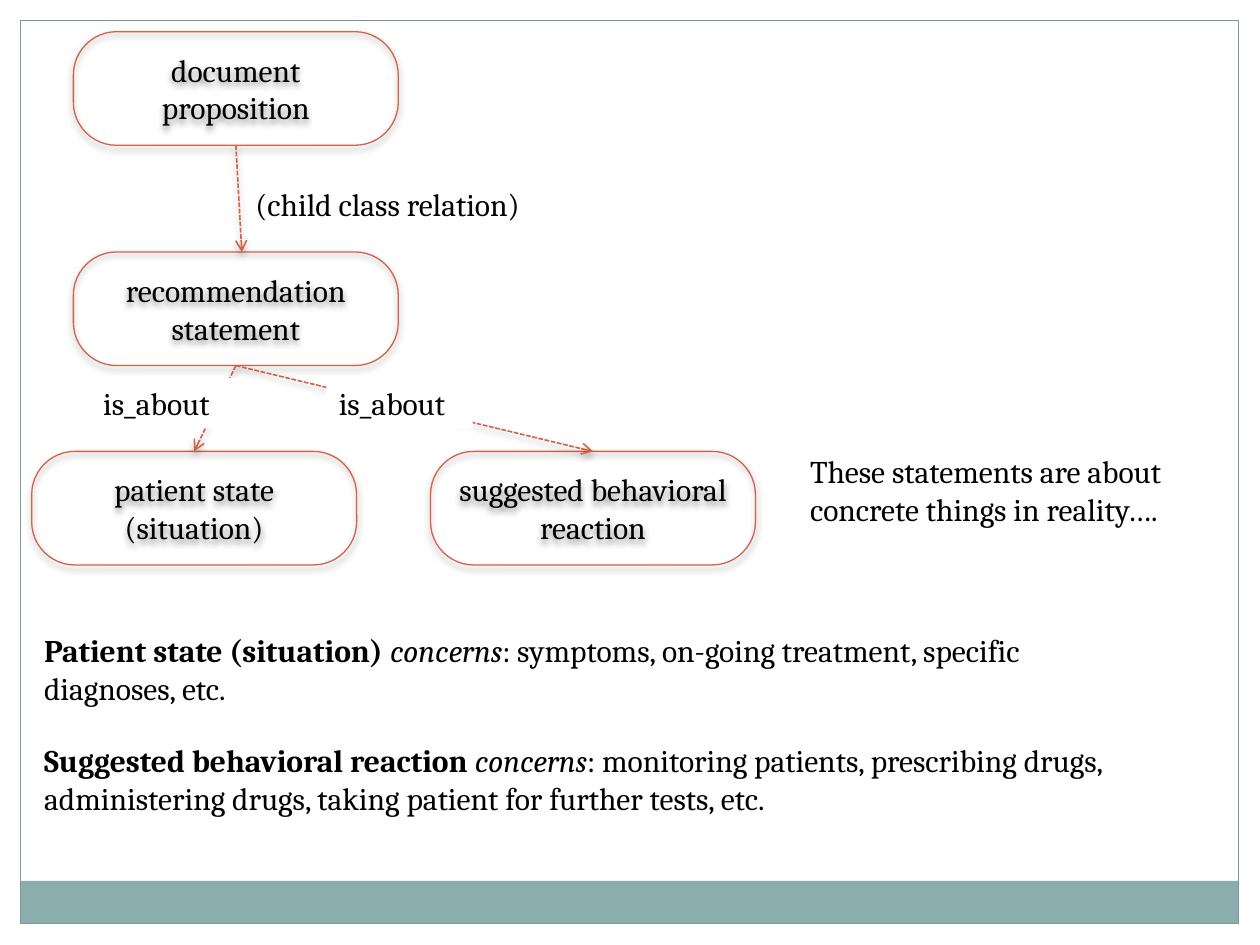
from lxml.etree import SubElement
from pptx import Presentation
from pptx.dml.color import RGBColor
from pptx.enum.dml import MSO_LINE
from pptx.enum.shapes import MSO_CONNECTOR, MSO_SHAPE
from pptx.enum.text import MSO_ANCHOR, PP_ALIGN
from pptx.oxml.ns import qn
from pptx.util import Cm, Pt

FONT = "Cambria"
TEXT, ACCENT, FRAME, BAND, WHITE = "000000", "D16349", "7C999A", "8CADAE", "FFFFFF"
NODE_WIDTH, NODE_HEIGHT = 6.55, 2.29
TOP, LEFT, BOTTOM = 0, 1, 2


def color(value):
    return RGBColor.from_string(value)


def format_span(span, bold=False, italic=False):
    span.font.name = FONT
    span.font.size = Pt(18)
    span.font.bold = bold
    span.font.italic = italic
    span.font.color.rgb = color(TEXT)


def add_shadow(shape, opacity):
    """Soft shadow straight below the shape; opacity in percent."""
    effects = SubElement(shape._element.spPr, qn("a:effectLst"))
    shadow = SubElement(effects, qn("a:outerShdw"), blurRad=str(Pt(4)),
                        dist=str(Pt(2)), dir="5400000", rotWithShape="0")
    black = SubElement(shadow, qn("a:srgbClr"), val="000000")
    SubElement(black, qn("a:alpha"), val=str(opacity * 1000))


def add_text(slide, left, top, width, height, parts, wrap=True, fill=None):
    """Text box from (text, bold, italic) parts."""
    box = slide.shapes.add_textbox(Cm(left), Cm(top), Cm(width), Cm(height))
    box.text_frame.word_wrap = wrap
    if fill:
        box.fill.solid()
        box.fill.fore_color.rgb = color(fill)
    para = box.text_frame.paragraphs[0]
    for text, bold, italic in parts:
        span = para.add_run()
        span.text = text
        format_span(span, bold, italic)


def add_node(slide, left, top, text):
    node = slide.shapes.add_shape(MSO_SHAPE.ROUNDED_RECTANGLE, Cm(left), Cm(top),
                                  Cm(NODE_WIDTH), Cm(NODE_HEIGHT))
    node.adjustments[0] = 0.38
    node.fill.background()
    node.line.color.rgb = color(ACCENT)
    node.line.width = Pt(0.75)
    add_shadow(node, 45)
    frame = node.text_frame
    frame.word_wrap = True
    frame.vertical_anchor = MSO_ANCHOR.MIDDLE
    frame.text = text
    frame.paragraphs[0].alignment = PP_ALIGN.CENTER
    format_span(frame.paragraphs[0].runs[0])
    return node


def add_arrow(slide, parent, child, shift=0):
    """Dashed arrow from parent to child; a shifted end stays unjoined."""
    arrow = slide.shapes.add_connector(
        MSO_CONNECTOR.STRAIGHT, parent.left + parent.width // 2,
        parent.top + parent.height, child.left + child.width // 2 + Cm(shift), child.top)
    arrow.begin_connect(parent, BOTTOM)
    if not shift:
        arrow.end_connect(child, TOP)
    arrow.line.color.rgb = color(ACCENT)
    arrow.line.width = Pt(0.9)
    arrow.line.dash_style = MSO_LINE.SQUARE_DOT
    SubElement(arrow.line._get_or_add_ln(), qn("a:tailEnd"), type="arrow")
    add_shadow(arrow, 35)


def draw_frame(slide, left, top, width, height):
    # Band along the bottom edge
    band_height = 0.86
    band = slide.shapes.add_shape(MSO_SHAPE.RECTANGLE, Cm(left),
                                  Cm(top + height - band_height), Cm(width), Cm(band_height))
    band.fill.solid()
    band.fill.fore_color.rgb = color(BAND)
    band.line.fill.background()
    # Outline of the page
    outline = slide.shapes.add_shape(MSO_SHAPE.RECTANGLE, Cm(left), Cm(top),
                                     Cm(width), Cm(height))
    outline.fill.background()
    outline.line.color.rgb = color(FRAME)
    outline.line.width = Pt(0.75)
    for shape in (band, outline):
        shape.shadow.inherit = False


def draw_diagram(slide, left, top):
    # Classes
    document = add_node(slide, left + 0.84, top, "document proposition")
    statement = add_node(slide, left + 0.84, top + 4.44, "recommendation statement")
    patient = add_node(slide, left, top + 8.46, "patient state (situation)")
    reaction = add_node(slide, left + 8.04, top + 8.46, "suggested behavioral reaction")
    # Relations
    add_arrow(slide, document, statement, shift=0.12)
    add_arrow(slide, statement, patient)
    add_arrow(slide, statement, reaction)
    # Relation labels
    add_text(slide, left + 4.26, top + 2.97, 6.17, 1.02,
             [("(child class relation)", False, False)], wrap=False)
    for offset in (1.19, 5.94):
        add_text(slide, left + offset, top + 6.98, 2.95, 1.02,
                 [("is_about", False, False)], wrap=False, fill=WHITE)
    # Side remark
    add_text(slide, left + 15.44, top + 8.35, 8.89, 1.8,
             [("These statements are about concrete things in reality….", False, False)])


def draw_definitions(slide, left, top, width, pitch):
    definitions = [
        ("Patient state (situation) ",
         ": symptoms, on-going treatment, specific diagnoses, etc."),
        ("Suggested behavioral reaction ",
         ": monitoring patients, prescribing drugs, administering drugs, "
         "taking patient for further tests, etc."),
    ]
    for row, (term, meaning) in enumerate(definitions):
        add_text(slide, left, top + row * pitch, width, 1.8,
                 [(term, True, False), ("concerns", False, True), (meaning, False, False)])


def main():
    deck = Presentation()
    deck.slide_width, deck.slide_height = Cm(25.4), Cm(19.05)
    slide = deck.slides.add_slide(deck.slide_layouts[6])
    draw_frame(slide, 0.42, 0.42, 24.55, 18.2)
    draw_diagram(slide, 0.64, 0.64)
    draw_definitions(slide, 0.64, 12.6, 22.43, 2.21)
    deck.save("out.pptx")


if __name__ == "__main__":
    main()
